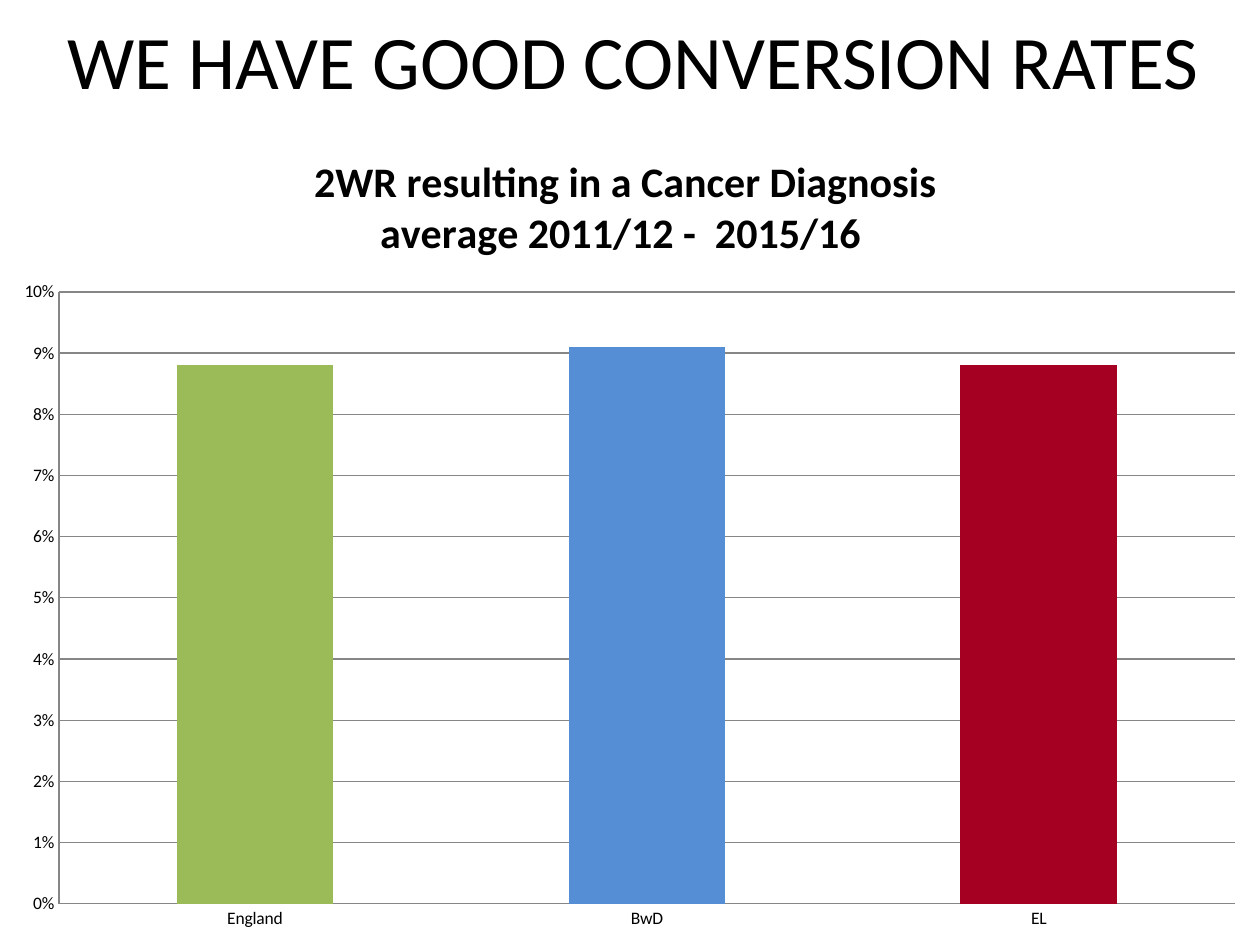
from typing import Any, NamedTuple

import pptx
import pptx.chart.data
import pptx.dml.color
import pptx.enum.chart
import pptx.enum.text
import pptx.oxml
import pptx.oxml.ns
import pptx.util

SCALE = 914400 // 126
FACE = "Calibri"
BLACK = "000000"
GREY = "868686"


class Box(NamedTuple):
    left: int
    top: int
    width: int
    height: int


class Bar(NamedTuple):
    area: str
    rate: float
    color: str


BARS = [
    Bar("England", 0.088, "9BBB59"),
    Bar("BwD", 0.091, "558ED5"),
    Bar("EL", 0.088, "A50021"),
]
HEAD = "WE HAVE GOOD CONVERSION RATES "
LINES = ["2WR resulting in a Cancer Diagnosis ", "average 2011/12 -  2015/16  "]
HEAD_BOX = Box(35, 0, 1213, 118)
CHART_BOX = Box(0, 129, 1260, 816)
PLOT_BOX = Box(59, 292, 1176, 612)


def px(count: int) -> int:
    return count * SCALE


def rgb(code: str) -> pptx.dml.color.RGBColor:
    return pptx.dml.color.RGBColor.from_string(code)


def apply(item: Any, values: dict[str, Any]) -> None:
    for name, value in values.items():
        setattr(item, name, value)


def style(font: Any, size: float, bold: bool = False) -> None:
    apply(font, {"name": FACE, "size": pptx.util.Pt(size), "bold": bold})
    font.color.rgb = rgb(BLACK)


def rule(line: Any) -> None:
    line.width = pptx.util.Pt(0.75)
    line.color.rgb = rgb(GREY)


def add_head(slide: Any) -> None:
    head = slide.shapes.title
    apply(head, {name: px(size) for name, size in HEAD_BOX._asdict().items()})
    frame = head.text_frame
    apply(frame, {
        "text": HEAD,
        "word_wrap": True,
        "auto_size": pptx.enum.text.MSO_AUTO_SIZE.NONE,
        "vertical_anchor": pptx.enum.text.MSO_ANCHOR.MIDDLE,
    })
    para = frame.paragraphs[0]
    para.alignment = pptx.enum.text.PP_ALIGN.CENTER
    style(para.runs[0].font, 43.2)


def place_plot(chart: Any) -> None:
    """Fix the inner plot area as fractions of the chart frame."""
    parts = {
        "x": (PLOT_BOX.left - CHART_BOX.left) / CHART_BOX.width,
        "y": (PLOT_BOX.top - CHART_BOX.top) / CHART_BOX.height,
        "w": PLOT_BOX.width / CHART_BOX.width,
        "h": PLOT_BOX.height / CHART_BOX.height,
    }
    modes = '<c:xMode val="edge"/><c:yMode val="edge"/>'
    sizes = "".join(f'<c:{key} val="{part:.4f}"/>' for key, part in parts.items())
    layout = pptx.oxml.parse_xml(
        f'<c:layout {pptx.oxml.ns.nsdecls("c")}><c:manualLayout>'
        f'<c:layoutTarget val="inner"/>{modes}{sizes}</c:manualLayout></c:layout>'
    )
    area = chart.element.chart.plotArea
    for old in area.findall(pptx.oxml.ns.qn("c:layout")):
        area.remove(old)
    area.insert(0, layout)


def add_title(chart: Any) -> None:
    chart.has_title = True
    chart.chart_title.include_in_layout = False
    frame = chart.chart_title.text_frame
    frame.text = "\n".join(LINES)
    for para in frame.paragraphs:
        style(para.font, 24, True)
        style(para.runs[0].font, 24, True)


def style_axes(chart: Any) -> None:
    none = pptx.enum.chart.XL_TICK_MARK.NONE
    for axis in (chart.category_axis, chart.value_axis):
        apply(axis, {"major_tick_mark": none, "minor_tick_mark": none})
        rule(axis.format.line)
    scale = chart.value_axis
    apply(scale, {
        "minimum_scale": 0, "maximum_scale": 0.1, "major_unit": 0.01,
        "has_major_gridlines": True,
    })
    rule(scale.major_gridlines.format.line)
    apply(scale.tick_labels, {"number_format": "0%", "number_format_is_linked": False})


def add_rates(slide: Any) -> None:
    data = pptx.chart.data.CategoryChartData(number_format="0.0%")
    data.categories = [bar.area for bar in BARS]
    data.add_series("Series 1", [bar.rate for bar in BARS])
    kind = pptx.enum.chart.XL_CHART_TYPE.COLUMN_CLUSTERED
    chart = slide.shapes.add_chart(kind, *map(px, CHART_BOX), data).chart
    chart.has_legend = False
    style(chart.font, 10)
    add_title(chart)
    style_axes(chart)
    place_plot(chart)
    plot = chart.plots[0]
    apply(plot, {"gap_width": 150, "vary_by_categories": False})
    row = plot.series[0]
    row.format.fill.solid()
    row.format.fill.fore_color.rgb = rgb("4F81BD")
    for spot, bar in enumerate(BARS):
        fill = row.points[spot].format.fill
        fill.solid()
        fill.fore_color.rgb = rgb(bar.color)


def main() -> None:
    deck = pptx.Presentation()
    apply(deck, {"slide_width": px(1260), "slide_height": px(945)})
    slide = deck.slides.add_slide(deck.slide_layouts[5])
    add_head(slide)
    add_rates(slide)
    deck.save("out.pptx")


if __name__ == "__main__":
    main()
